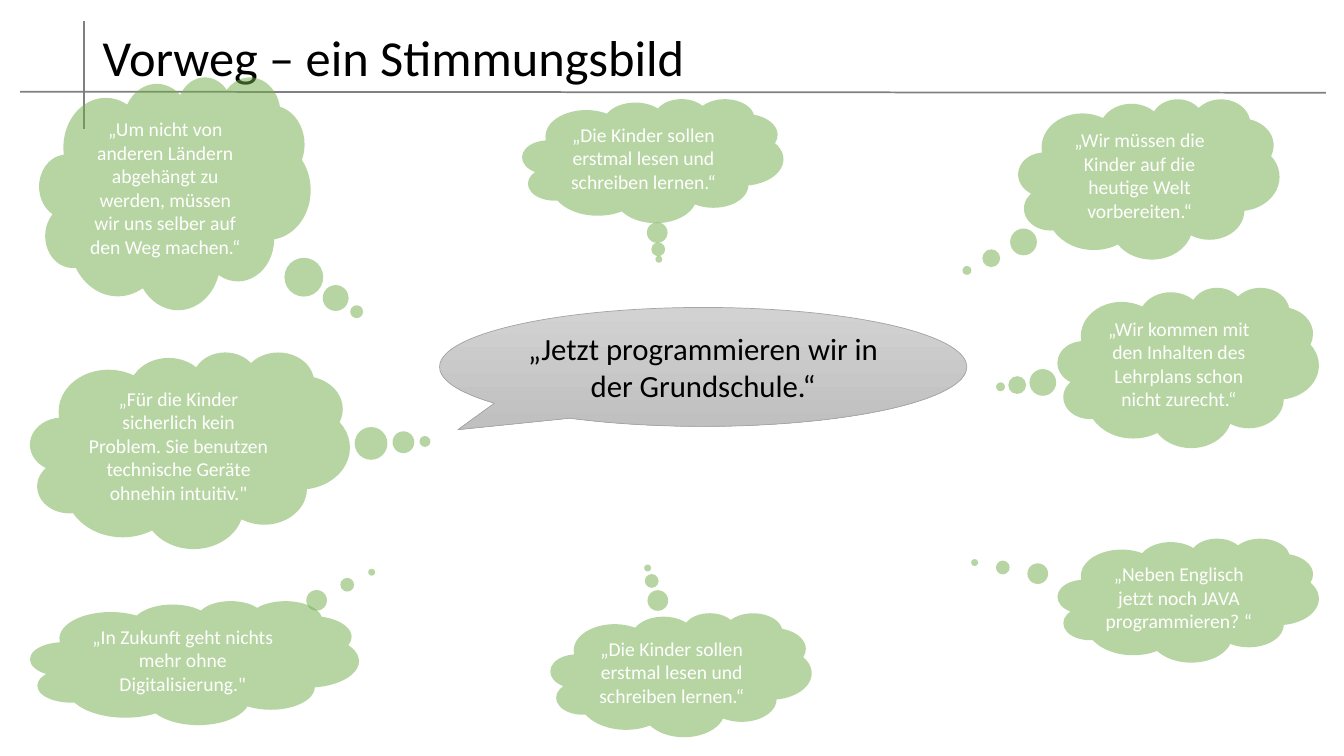
from lxml.etree import SubElement
from pptx import Presentation
from pptx.dml.color import RGBColor
from pptx.enum.shapes import MSO_CONNECTOR, MSO_SHAPE
from pptx.enum.text import MSO_ANCHOR, PP_ALIGN
from pptx.oxml.ns import qn
from pptx.util import Inches, Pt

COLORS = {
    "rule": "808080",
    "cloud": "70AD47",
    "bubble_top": "D2D2D2",
    "bubble_bottom": "C0C0C0",
    "bubble_line": "A5A5A5",
    "dark": "000000",
    "light": "FFFFFF",
}


def write_text(shape, text, size, color, alignment):
    frame = shape.text_frame
    frame.word_wrap = True
    frame.vertical_anchor = MSO_ANCHOR.MIDDLE
    frame.text = text
    para = frame.paragraphs[0]
    para.alignment = alignment
    span = para.runs[0]
    span.font.name = "Calibri"
    span.font.size = Pt(size)
    span.font.color.rgb = RGBColor.from_string(COLORS[color])
    return para


def add_callout(page, kind, bounds, pointer):
    shape = page.shapes.add_shape(kind, *[Inches(value) for value in bounds])
    shape.shadow.inherit = False
    shape.adjustments[0], shape.adjustments[1] = pointer
    return shape


deck = Presentation()
deck.slide_width = Inches(13.33)
deck.slide_height = Inches(7.5)
page = deck.slides.add_slide(deck.slide_layouts[6])

# Crossed rules beside the title
for ends in [(0.2, 0.91, 13.15, 0.92), (0.83, 0.21, 0.83, 1.28)]:
    rule = page.shapes.add_connector(
        MSO_CONNECTOR.STRAIGHT, *[Inches(value) for value in ends])
    rule.line.color.rgb = RGBColor.from_string(COLORS["rule"])
    rule.line.width = Pt(1.25)
    SubElement(rule._element.spPr, qn("a:effectLst"))

# Central speech bubble
bubble = add_callout(page, MSO_SHAPE.OVAL_CALLOUT,
                     (4.36, 3.05, 5.23, 1.18), (-0.465, 0.528))
bubble.fill.gradient()
bubble.fill.gradient_angle = 270
for stop, name in zip(bubble.fill.gradient_stops, ("bubble_top", "bubble_bottom")):
    stop.color.rgb = RGBColor.from_string(COLORS[name])
bubble.line.color.rgb = RGBColor.from_string(COLORS["bubble_line"])
bubble.line.width = Pt(0.5)
write_text(bubble, "„Jetzt programmieren wir in der Grundschule.“",
           22, "dark", PP_ALIGN.CENTER)

# Title
title = page.shapes.add_textbox(Inches(0.92), Inches(0.13), Inches(6.24), Inches(0.94))
title_para = write_text(title, "Vorweg – ein Stimmungsbild", 36, "dark", PP_ALIGN.LEFT)
title_para.line_spacing = 0.9

# Thought clouds: bounds, pointer, opinion
clouds = [
    ((10.49, 5.34, 2.59, 1.23), (-0.818, -0.304),
     "„Neben Englisch jetzt noch JAVA programmieren? “"),
    ((5.18, 0.98, 2.59, 1.23), (0.023, 0.795),
     "„Die Kinder sollen erstmal lesen und schreiben lernen.“"),
    ((10.49, 2.85, 2.59, 1.59), (-0.719, 0.121),
     "„Wir kommen mit den Inhalten des Lehrplans schon nicht zurecht.“"),
    ((10.1, 0.98, 2.59, 1.59), (-0.697, 0.571),
     "„Wir müssen die Kinder auf die heutige Welt vorbereiten.“"),
    ((5.46, 6.08, 2.59, 1.23), (-0.128, -0.862),
     "„Die Kinder sollen erstmal lesen und schreiben lernen.“"),
    ((0.3, 3.49, 3.17, 1.95), (0.735, -0.044),
     "„Für die Kinder sicherlich kein Problem. Sie benutzen technische Geräte "
     "ohnehin intuitiv.\""),
    ((0.3, 5.96, 3.26, 1.23), (0.539, -0.73),
     "„In Zukunft geht nichts mehr ohne Digitalisierung.\""),
    ((0.39, 0.76, 2.69, 2.31), (0.67, 0.51),
     "„Um nicht von anderen Ländern abgehängt zu werden, müssen wir uns selber "
     "auf den Weg machen.“"),
]
for bounds, pointer, opinion in clouds:
    cloud = add_callout(page, MSO_SHAPE.CLOUD_CALLOUT, bounds, pointer)
    cloud.fill.solid()
    cloud.fill.fore_color.rgb = RGBColor.from_string(COLORS["cloud"])
    cloud_color = cloud._element.spPr.find(qn("a:solidFill"))[0]
    SubElement(cloud_color, qn("a:alpha"), val="50000")
    cloud.line.fill.background()
    write_text(cloud, opinion, 14, "light", PP_ALIGN.CENTER)

deck.save("out.pptx")
